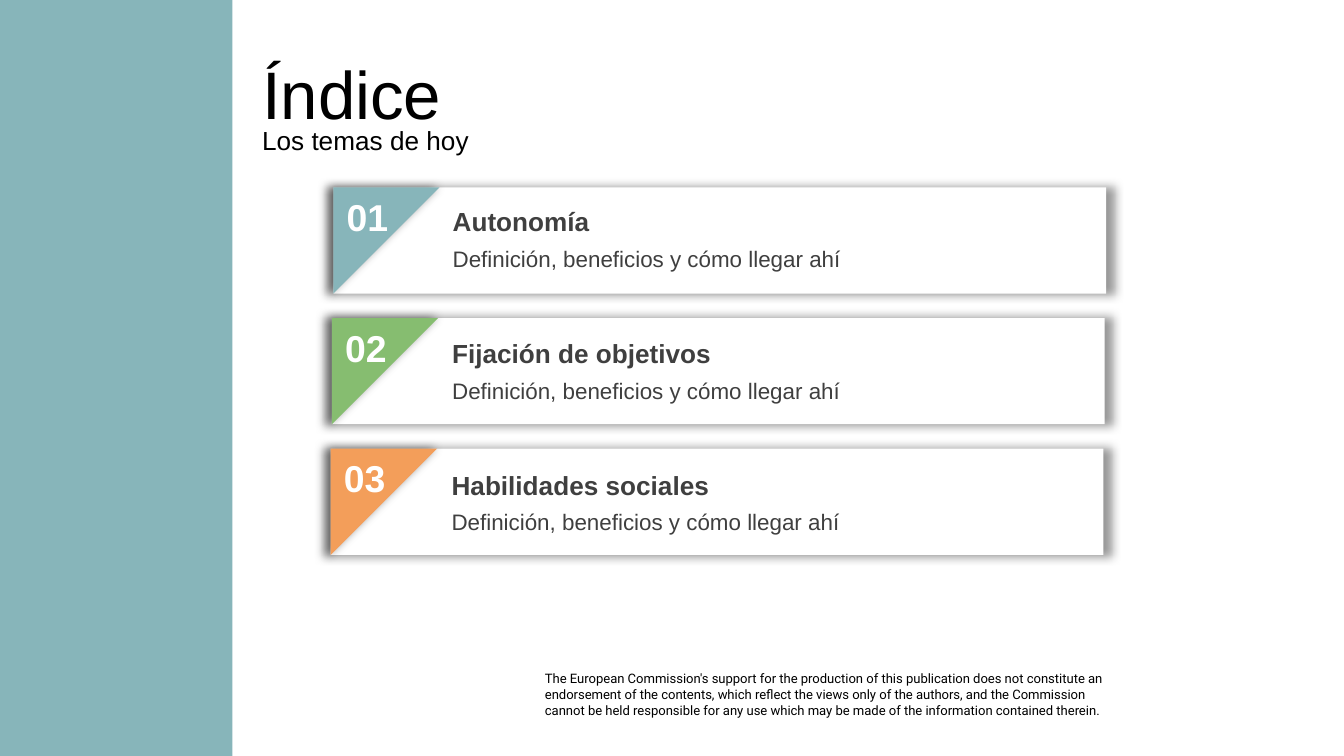
from dataclasses import dataclass

from lxml.etree import SubElement
from pptx import Presentation
from pptx.dml.color import RGBColor
from pptx.enum.shapes import MSO_SHAPE
from pptx.enum.text import MSO_ANCHOR, MSO_AUTO_SIZE, PP_ALIGN
from pptx.oxml.ns import qn
from pptx.shapes.autoshape import Shape
from pptx.slide import Slide
from pptx.util import Emu, Inches, Pt

SLIDE_WIDTH = Inches(10)
SLIDE_HEIGHT = Emu(SLIDE_WIDTH * 9 // 16)
COLUMNS = 100
ROWS = 56.25

TEAL = RGBColor(0x87, 0xB5, 0xBA)
GREEN = RGBColor(0x86, 0xBD, 0x70)
ORANGE = RGBColor(0xF3, 0x9E, 0x5A)
WHITE = RGBColor(0xFF, 0xFF, 0xFF)
BLACK = RGBColor(0x00, 0x00, 0x00)
DARK_GRAY = RGBColor(0x3F, 0x3F, 0x3F)

CARD_LEFT, CARD_TOP = 24.8, 13.95
CARD_WIDTH, CARD_HEIGHT = 57.5, 7.9
CARD_PITCH = 9.72
CARD_DRIFT = -0.1
TEXT_LEFT, TEXT_TOP = 32.7, 14.8
TEXT_PITCH = 9.8
TEXT_DRIFT = -0.04


@dataclass(frozen=True)
class Area:
    column: float
    row: float
    columns: float
    rows: float

    def lengths(self) -> tuple[Emu, Emu, Emu, Emu]:
        horizontal, vertical = SLIDE_WIDTH / COLUMNS, SLIDE_HEIGHT / ROWS
        return (
            Emu(round(self.column * horizontal)),
            Emu(round(self.row * vertical)),
            Emu(round(self.columns * horizontal)),
            Emu(round(self.rows * vertical)),
        )


@dataclass(frozen=True)
class Topic:
    number: str
    heading: str
    description: str
    color: RGBColor


TOPICS = [
    Topic("01", "Autonomía", "Definición, beneficios y cómo llegar ahí", TEAL),
    Topic("02", "Fijación de objetivos", "Definición, beneficios y cómo llegar ahí", GREEN),
    Topic("03", "Habilidades sociales", "Definición, beneficios y cómo llegar ahí", ORANGE),
]

DISCLAIMER = (
    "The European Commission's support for the production of this publication does not "
    "constitute an endorsement of the contents, which reflect the views only of the "
    "authors, and the Commission\n"
    "cannot be held responsible for any use which may be made of the information "
    "contained therein."
)


def write_text(shape: Shape, text: str, *, size: float, color: RGBColor = BLACK,
               bold: bool = False, font: str = "Arial",
               anchor: MSO_ANCHOR = MSO_ANCHOR.TOP,
               auto_size: MSO_AUTO_SIZE = MSO_AUTO_SIZE.SHAPE_TO_FIT_TEXT,
               inset: tuple[float, float] = (0.1, 0.05)) -> None:
    frame = shape.text_frame
    frame.text = text
    frame.word_wrap = True
    frame.auto_size = auto_size
    frame.vertical_anchor = anchor
    frame.margin_left = frame.margin_right = Inches(inset[0])
    frame.margin_top = frame.margin_bottom = Inches(inset[1])
    for paragraph in frame.paragraphs:
        paragraph.alignment = PP_ALIGN.LEFT
        paragraph.space_before = Pt(0)
        for run in paragraph.runs:
            run.font.name = font
            run.font.size = Pt(size)
            run.font.bold = bold
            run.font.color.rgb = color


def add_text(slide: Slide, area: Area, text: str, **text_format) -> None:
    write_text(slide.shapes.add_textbox(*area.lengths()), text, **text_format)


def fill_placeholder(shape: Shape, area: Area, text: str, size: float) -> None:
    shape.left, shape.top, shape.width, shape.height = area.lengths()
    write_text(shape, text, size=size, anchor=MSO_ANCHOR.MIDDLE,
               auto_size=MSO_AUTO_SIZE.NONE)


def remove_bullet(shape: Shape) -> None:
    properties = shape.text_frame.paragraphs[0]._p.get_or_add_pPr()
    properties.set("marL", "0")
    properties.set("indent", "0")
    SubElement(properties, qn("a:buNone"))


def add_filled(slide: Slide, kind: MSO_SHAPE, area: Area, color: RGBColor) -> Shape:
    shape = slide.shapes.add_shape(kind, *area.lengths())
    shape.shadow.inherit = False
    shape.fill.solid()
    shape.fill.fore_color.rgb = color
    shape.line.fill.background()
    return shape


def add_glow_shadow(shape: Shape) -> None:
    effects = shape._element.spPr.find(qn("a:effectLst"))
    shadow = SubElement(effects, qn("a:outerShdw"), blurRad=str(Pt(5)), dist="0",
                        dir="0", sx="102000", sy="102000", algn="ctr",
                        rotWithShape="0")
    color = SubElement(shadow, qn("a:srgbClr"), val="000000")
    SubElement(color, qn("a:alpha"), val="40000")


def add_topic(slide: Slide, topic: Topic, index: int) -> None:
    left = CARD_LEFT + index * CARD_DRIFT
    top = CARD_TOP + index * CARD_PITCH
    card = add_filled(slide, MSO_SHAPE.RECTANGLE,
                      Area(left, top, CARD_WIDTH, CARD_HEIGHT), WHITE)
    corner = add_filled(slide, MSO_SHAPE.RIGHT_TRIANGLE,
                        Area(left, top, CARD_HEIGHT, CARD_HEIGHT), topic.color)
    corner.rotation = 90
    for shape in (card, corner):
        add_glow_shadow(shape)

    add_text(slide, Area(left, top, 5.8, 4.4), topic.number,
             size=20, color=WHITE, bold=True)
    text_left = TEXT_LEFT + index * TEXT_DRIFT
    text_top = TEXT_TOP + index * TEXT_PITCH
    add_text(slide, Area(text_left, text_top, 48, 3.4), topic.heading,
             size=14, color=DARK_GRAY, bold=True)
    add_text(slide, Area(text_left, text_top + 2.95, 48, 3), topic.description,
             size=12, color=DARK_GRAY)


def main() -> None:
    presentation = Presentation()
    presentation.slide_width = SLIDE_WIDTH
    presentation.slide_height = SLIDE_HEIGHT
    slide = presentation.slides.add_slide(presentation.slide_layouts[1])

    add_filled(slide, MSO_SHAPE.RECTANGLE, Area(0, 0, 17.3, ROWS), TEAL)
    fill_placeholder(slide.shapes.title, Area(18.5, 3.75, 72, 6.3), "Índice", 36)
    subtitle = slide.placeholders[1]
    fill_placeholder(subtitle, Area(18.5, 9.3, 72, 2.3), "Los temas de hoy", 14)
    remove_bullet(subtitle)

    for index, topic in enumerate(TOPICS):
        add_topic(slide, topic, index)

    add_text(slide, Area(40.55, 49.9, 41.7, 3.5), DISCLAIMER,
             size=7, font="Roboto", inset=(0, 0))
    presentation.save("out.pptx")


if __name__ == "__main__":
    main()
